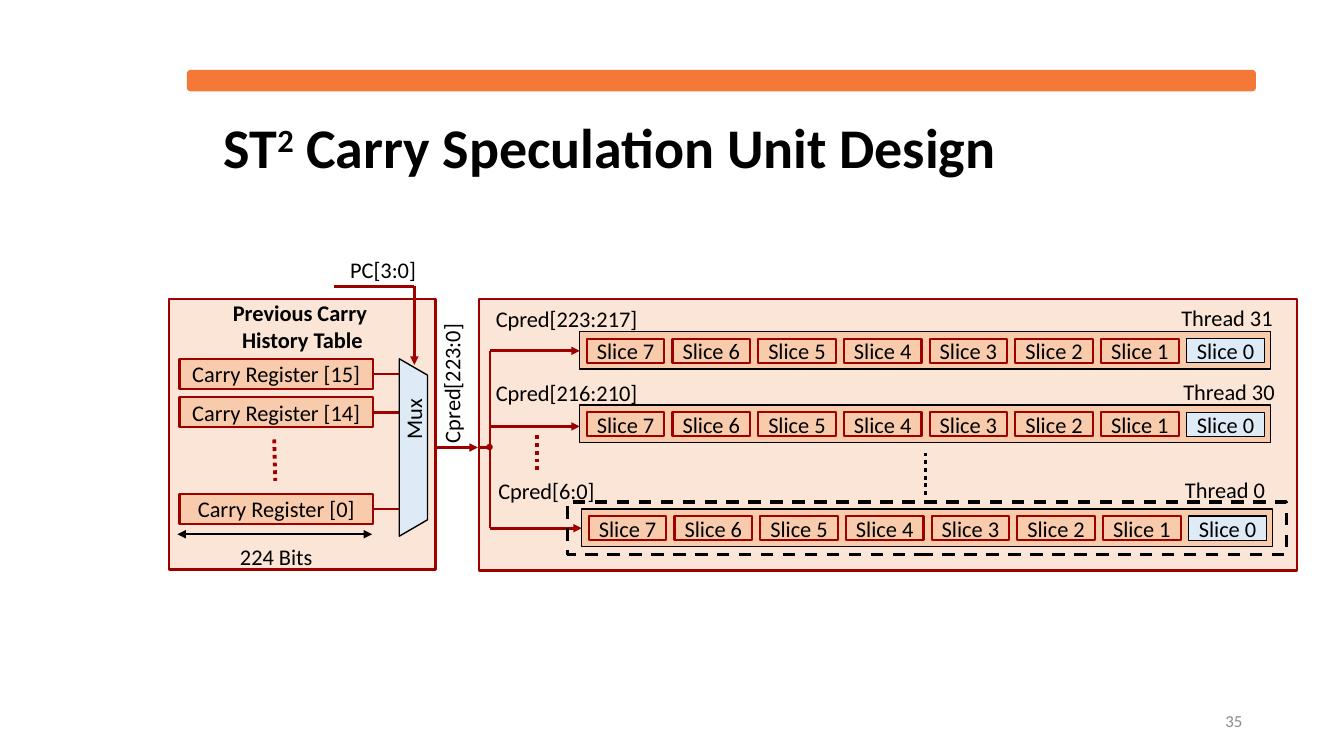
from dataclasses import dataclass

from lxml import etree
from pptx import Presentation
from pptx.dml.color import RGBColor
from pptx.enum.dml import MSO_LINE
from pptx.enum.shapes import MSO_CONNECTOR, MSO_SHAPE
from pptx.enum.text import MSO_ANCHOR, PP_ALIGN
from pptx.oxml.ns import qn
from pptx.util import Inches, Pt

RECTANGLE, ROUNDED = MSO_SHAPE.RECTANGLE, MSO_SHAPE.ROUNDED_RECTANGLE
OVAL, TRAPEZOID = MSO_SHAPE.OVAL, MSO_SHAPE.TRAPEZOID
STRAIGHT = MSO_CONNECTOR.STRAIGHT
DOTTED, DASHED = MSO_LINE.ROUND_DOT, MSO_LINE.DASH
TOP, MIDDLE = MSO_ANCHOR.TOP, MSO_ANCHOR.MIDDLE
LEFT, CENTER, RIGHT = PP_ALIGN.LEFT, PP_ALIGN.CENTER, PP_ALIGN.RIGHT


@dataclass(frozen=True)
class Theme:
    font: str = "Calibri"
    accent: str = "F47836"
    red: str = "9E0000"
    black: str = "000000"
    gray: str = "8C8C8C"
    panel: str = "FBE5D6"
    cell: str = "F8CBAD"
    blue: str = "DEEBF7"
    title_size: int = 40
    label_size: int = 16
    number_size: int = 12
    thin: float = 1
    border: float = 1.5
    wire: float = 2
    frame: float = 2.25
    dots: float = 2.75


THEME = Theme()


def rgb(color):
    return RGBColor.from_string(color)


def add_run(paragraph, text, size=THEME.label_size, color=THEME.black, bold=False):
    run = paragraph.add_run()
    run.text = text
    run.font.name = THEME.font
    run.font.size = Pt(size)
    run.font.bold = bold
    run.font.color.rgb = rgb(color)
    return run


def add_block(slide, box, fill, line, width, text="", kind=RECTANGLE):
    """Draw a filled preset shape; a fill of None leaves it open."""
    shape = slide.shapes.add_shape(kind, *map(Inches, box))
    shape.shadow.inherit = False
    if fill:
        shape.fill.solid()
        shape.fill.fore_color.rgb = rgb(fill)
    else:
        shape.fill.background()
    shape.line.color.rgb = rgb(line)
    shape.line.width = Pt(width)
    if text:
        frame = shape.text_frame
        frame.margin_left = frame.margin_right = frame.margin_top = frame.margin_bottom = 0
        frame.vertical_anchor = MIDDLE
        frame.paragraphs[0].alignment = CENTER
        add_run(frame.paragraphs[0], text)
    return shape


def add_text_box(slide, box, anchor=TOP, alignment=CENTER, rotation=0):
    """Add an empty wrapped text box and return its paragraph."""
    shape = slide.shapes.add_textbox(*map(Inches, box))
    shape.rotation = rotation
    shape.text_frame.word_wrap = True
    shape.text_frame.vertical_anchor = anchor
    paragraph = shape.text_frame.paragraphs[0]
    paragraph.alignment = alignment
    return paragraph


def add_label(slide, center, top, width, text, rotation=0):
    add_run(add_text_box(slide, (center - width / 2, top, width, 0.37), rotation=rotation), text)


def add_line(slide, start, end, color=THEME.red, width=THEME.wire, dash=None, arrows=()):
    """Draw a line; arrows lists the ends (headEnd, tailEnd) that get a triangle."""
    connector = slide.shapes.add_connector(STRAIGHT, *map(Inches, (*start, *end)))
    connector.line.color.rgb = rgb(color)
    connector.line.width = Pt(width)
    if dash:
        connector.line.dash_style = dash
    properties = connector._element.spPr
    for arrow in arrows:
        etree.SubElement(properties.find(qn("a:ln")), qn(f"a:{arrow}"), type="triangle")
    etree.SubElement(properties, qn("a:effectLst"))


def add_title(slide, box):
    left, top, width, height = box
    add_block(slide, (left - 0.26, top - 0.34, 10.59, 0.2),
              THEME.accent, THEME.accent, THEME.thin, kind=ROUNDED)
    paragraph = add_text_box(slide, box, MIDDLE, LEFT)
    paragraph.line_spacing = 0.9
    for text in ("ST", "2", " Carry Speculation Unit Design"):
        run = add_run(paragraph, text, THEME.title_size, bold=True)
        if text == "2":
            run._r.get_or_add_rPr().set("baseline", "30000")


def add_slide_number(slide, box):
    paragraph = add_text_box(slide, box, MIDDLE, RIGHT)
    add_run(paragraph, "35", THEME.number_size, THEME.gray)


def add_mux(slide, box):
    left, top, width, height = box
    middle_x, middle_y = left + width / 2, top + height / 2
    mux = add_block(slide, (middle_x - height / 2, middle_y - width / 2, height, width),
                    THEME.blue, THEME.black, THEME.thin, kind=TRAPEZOID)
    mux.adjustments[0] = 0.58
    mux.rotation = 90
    add_label(slide, middle_x, middle_y - 0.47, 1.07, "Mux", 270)


def add_history_table(slide, box):
    left, top, width, height = box
    add_block(slide, box, THEME.panel, THEME.red, THEME.border)
    heading = add_text_box(slide, (left, top - 0.05, width, 0.64))
    add_run(heading, "Previous Carry ", bold=True)
    heading.add_line_break()
    add_run(heading, "History Table", bold=True)

    register_left, register_width, mux_left = left + 0.1, 1.92, left + 2.28
    register_right = register_left + register_width
    register_center = register_left + register_width / 2
    for index, offset in ((15, 0.59), (14, 0.97), (0, 1.93)):
        y = top + offset
        add_block(slide, (register_left, y, register_width, 0.3), THEME.cell, THEME.red,
                  THEME.border, f"Carry Register [{index}]")
        add_line(slide, (register_right, y + 0.15), (mux_left, y + 0.15))
    add_line(slide, (register_center - 0.02, top + 1.39), (register_center - 0.01, top + 1.8),
             width=THEME.dots, dash=DOTTED)
    add_line(slide, (left + 0.08, top + 2.33), (register_right - 0.01, top + 2.33),
             THEME.black, THEME.border, arrows=("headEnd", "tailEnd"))
    add_label(slide, register_center, top + 2.37, register_width, "224 Bits")

    select_x, select_y = left + 2.43, top - 0.13
    add_line(slide, (select_x - 0.8, select_y), (select_x, select_y))
    add_line(slide, (select_x, select_y), (select_x, top + 0.65), arrows=("tailEnd",))
    add_label(slide, left + 2.12, top - 0.48, 1.34, "PC[3:0]")
    add_mux(slide, (mux_left, top + 0.59, 0.28, 1.76))

    add_line(slide, (left + width, top + 1.47), (left + width + 0.42, top + 1.47),
             arrows=("tailEnd",))
    add_label(slide, left + width + 0.16, top + 0.65, 1.52, "Cpred[223:0]", 270)


def add_thread_row(slide, box):
    left, top, width, height = box
    add_block(slide, box, THEME.cell, THEME.black, THEME.thin)
    for position in range(8):
        number = 7 - position
        fill, line, border = ((THEME.cell, THEME.red, THEME.border) if number
                              else (THEME.blue, THEME.black, THEME.thin))
        add_block(slide, (left + 0.07 + 0.85 * position, top + 0.07, 0.77, 0.24),
                  fill, line, border, f"Slice {number}")


def add_thread_panel(slide, box):
    left, top, width, height = box
    add_block(slide, box, THEME.panel, THEME.red, THEME.border)
    bus_x, input_y = left + 0.11, top + 1.47
    rows = (  # thread, bits, row left, row top, wire height, thread label center
        (31, "223:217", 1.0, 0.32, 0.51, 7.42),
        (30, "216:210", 1.0, 1.05, 1.26, 7.44),
        (0, "6:0", 1.02, 2.08, 2.27, 7.4),
    )
    for thread, bits, row_left, row_top, wire_y, label_x in rows:
        row = left + row_left, top + row_top, 6.85, 0.37
        add_line(slide, (bus_x, top + wire_y), (row[0], top + wire_y), arrows=("tailEnd",))
        add_thread_row(slide, row)
        label_top = top + (row_top - 0.32 if thread else 1.7)
        add_label(slide, left + label_x, label_top, 1.36, f"Thread {thread}")
        add_label(slide, left + (0.87 if thread else 0.67), label_top + 0.01,
                  1.75, f"Cpred[{bits}]")
    add_line(slide, (bus_x, top + rows[0][4]), (bus_x, top + rows[-1][4]))
    add_line(slide, (left, input_y), (bus_x, input_y))
    add_block(slide, (bus_x - 0.03, input_y - 0.03, 0.05, 0.05),
              THEME.red, THEME.red, THEME.thin, kind=OVAL)
    add_line(slide, (left + 0.58, top + 1.35), (left + 0.58, top + 1.7),
             width=THEME.dots, dash=DOTTED)
    add_line(slide, (left + 4.43, top + 1.52), (left + 4.43, top + 1.94),
             THEME.black, THEME.dots, DOTTED)
    selected = add_block(slide, (left + 0.88, top + 2.01, 7.13, 0.52),
                         None, THEME.black, THEME.frame)
    selected.line.dash_style = DASHED


def main():
    presentation = Presentation()
    presentation.slide_width, presentation.slide_height = Inches(13.33), Inches(7.5)
    slide = presentation.slides.add_slide(presentation.slide_layouts[6])
    add_title(slide, (2.12, 1.04, 10.41, 0.91))
    add_history_table(slide, (1.68, 2.97, 2.64, 2.68))
    add_thread_panel(slide, (4.75, 2.97, 8.11, 2.69))
    add_slide_number(slide, (9.42, 6.95, 3, 0.4))
    presentation.save("out.pptx")


if __name__ == "__main__":
    main()
